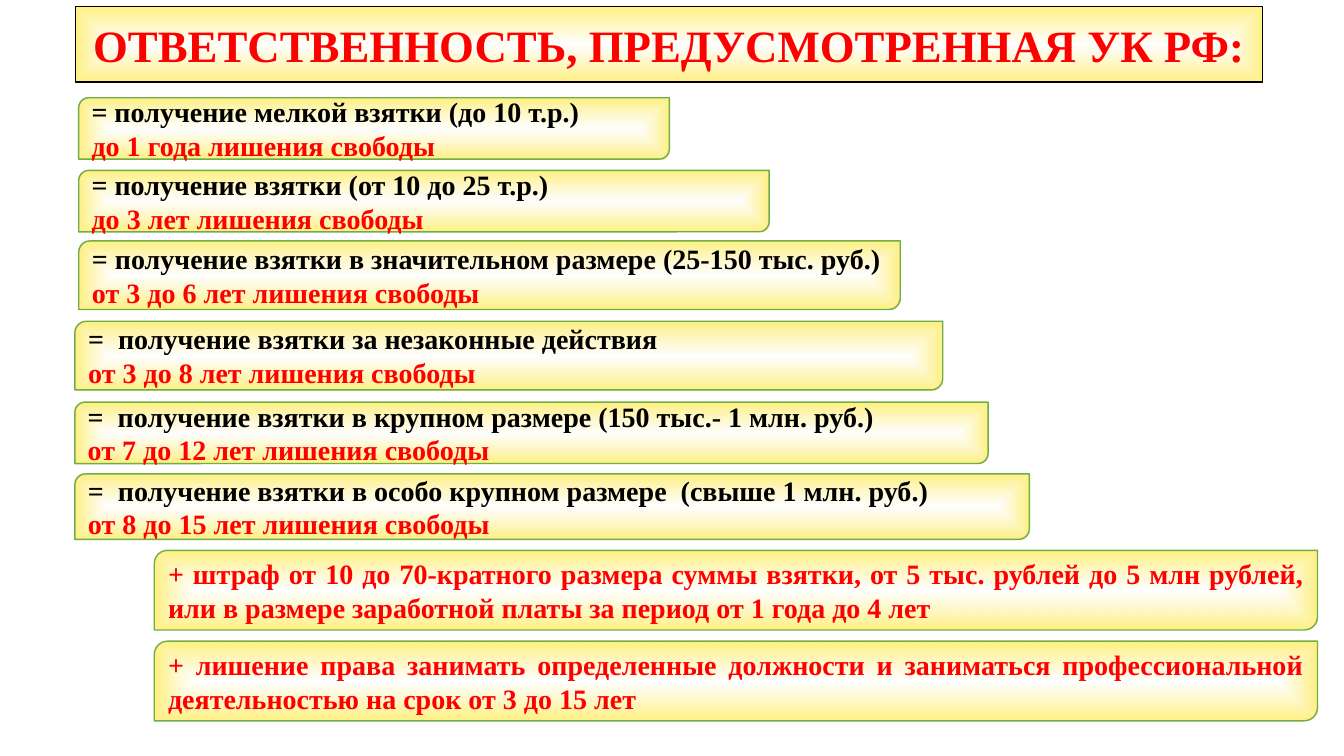
import pptx
import pptx.dml.color
import pptx.enum.shapes
import pptx.enum.text
import pptx.oxml
import pptx.oxml.ns
import pptx.util

Pt = pptx.util.Pt
Rgb = pptx.dml.color.RGBColor.from_string
Align = pptx.enum.text.PP_ALIGN
Preset = pptx.enum.shapes.MSO_SHAPE

THEME = {
    "font": "Times New Roman",
    "heading_size": 32,
    "body_size": 20,
    "offence": "000000",
    "penalty": "FF0000",
    "heading_edge": "000000",
    "panel_edge": "70AD47",
    "glow_centre": "FFFFFF",
    "glow_rim": "FFF081",
}

HEADING = "ОТВЕТСТВЕННОСТЬ, ПРЕДУСМОТРЕННАЯ УК РФ:"
HEADING_BOX = (54, 4.5, 848, 54)

OFFENCES = [
    ((56.2, 69.8, 421.9, 43.9),
     "= получение мелкой взятки (до 10 т.р.)",
     "до 1 года лишения свободы"),
    ((56.2, 121.7, 493.2, 43.9),
     "= получение взятки (от 10 до 25 т.р.)",
     "до 3 лет лишения свободы"),
    ((56.2, 172.1, 586.8, 49),
     "= получение взятки в значительном размере (25-150 тыс. руб.)",
     "от 3 до 6 лет лишения свободы"),
    ((53.5, 229.5, 619.9, 49),
     "=  получение взятки за незаконные действия",
     "от 3 до 8 лет лишения свободы"),
    ((53.5, 287.2, 652.3, 43.9),
     "=  получение взятки в крупном размере (150 тыс.- 1 млн. руб.)",
     "от 7 до 12 лет лишения свободы"),
    ((53.5, 338.5, 681.8, 46.8),
     "=  получение взятки в особо крупном размере  (свыше 1 млн. руб.)",
     "от 8 до 15 лет лишения свободы"),
]

EXTRA_PENALTIES = [
    "+ штраф от 10 до 70-кратного размера суммы взятки, от 5 тыс. рублей до 5 млн рублей, "
    "или в размере заработной платы за период от 1 года до 4 лет",
    "+ лишение права занимать определенные должности и заниматься профессиональной "
    "деятельностью на срок от 3 до 15 лет",
]
EXTRA_BOX = (110.2, 393.1, 830.9, 56.9)
EXTRA_STEP = 64.9


def set_all(target, values):
    for attribute, value in values.items():
        setattr(target, attribute, value)


def add_glow(panel):
    glow = pptx.oxml.parse_xml(
        f'<a:gradFill {pptx.oxml.ns.nsdecls("a")} rotWithShape="1"><a:gsLst>'
        f'<a:gs pos="0"><a:srgbClr val="{THEME["glow_centre"]}"><a:alpha val="83000"/></a:srgbClr></a:gs>'
        f'<a:gs pos="100000"><a:srgbClr val="{THEME["glow_rim"]}"/></a:gs></a:gsLst>'
        '<a:path path="shape"><a:fillToRect l="50000" t="50000" r="50000" b="50000"/></a:path>'
        '</a:gradFill>')
    panel.element.spPr.find(pptx.oxml.ns.qn("a:prstGeom")).addnext(glow)


def style_panel(panel, edge, lines, size, alignment):
    add_glow(panel)
    panel.line.color.rgb = Rgb(edge)
    panel.line.width = Pt(1)
    panel.shadow.inherit = False
    frame = panel.text_frame
    set_all(frame, {
        "word_wrap": True,
        "auto_size": pptx.enum.text.MSO_AUTO_SIZE.NONE,
        "vertical_anchor": pptx.enum.text.MSO_ANCHOR.MIDDLE,
    })
    frame.text = "\n".join(wording for wording, _ in lines)
    for paragraph, (_, colour) in zip(frame.paragraphs, lines):
        paragraph.alignment = alignment
        for run in paragraph.runs:
            set_all(run.font, {"name": THEME["font"], "size": Pt(size), "bold": True})
            run.font.color.rgb = Rgb(colour)


def build_heading(slide, box):
    heading = slide.shapes.title
    set_all(heading, dict(zip(("left", "top", "width", "height"), map(Pt, box))))
    heading.element.spPr.append(pptx.oxml.parse_xml(
        f'<a:prstGeom {pptx.oxml.ns.nsdecls("a")} prst="flowChartAlternateProcess"><a:avLst/></a:prstGeom>'))
    style_panel(heading, THEME["heading_edge"], [(HEADING, THEME["penalty"])],
                THEME["heading_size"], Align.CENTER)


def build_panel(slide, box, lines):
    panel = slide.shapes.add_shape(Preset.ROUND_2_DIAG_RECTANGLE, *map(Pt, box))
    style_panel(panel, THEME["panel_edge"], lines, THEME["body_size"], Align.JUSTIFY)


def build_offences(slide):
    for box, offence, sentence in OFFENCES:
        build_panel(slide, box, [(offence, THEME["offence"]), (sentence, THEME["penalty"])])


def build_extra_penalties(slide, box):
    left, top, width, height = box
    for row, penalty in enumerate(EXTRA_PENALTIES):
        build_panel(slide, (left, top + row * EXTRA_STEP, width, height),
                    [(penalty, THEME["penalty"])])


def main():
    deck = pptx.Presentation()
    set_all(deck, {"slide_width": Pt(960), "slide_height": Pt(540)})
    slide = deck.slides.add_slide(deck.slide_layouts.get_by_name("Title Only"))
    build_heading(slide, HEADING_BOX)
    build_offences(slide)
    build_extra_penalties(slide, EXTRA_BOX)
    deck.save("out.pptx")


if __name__ == "__main__":
    main()
